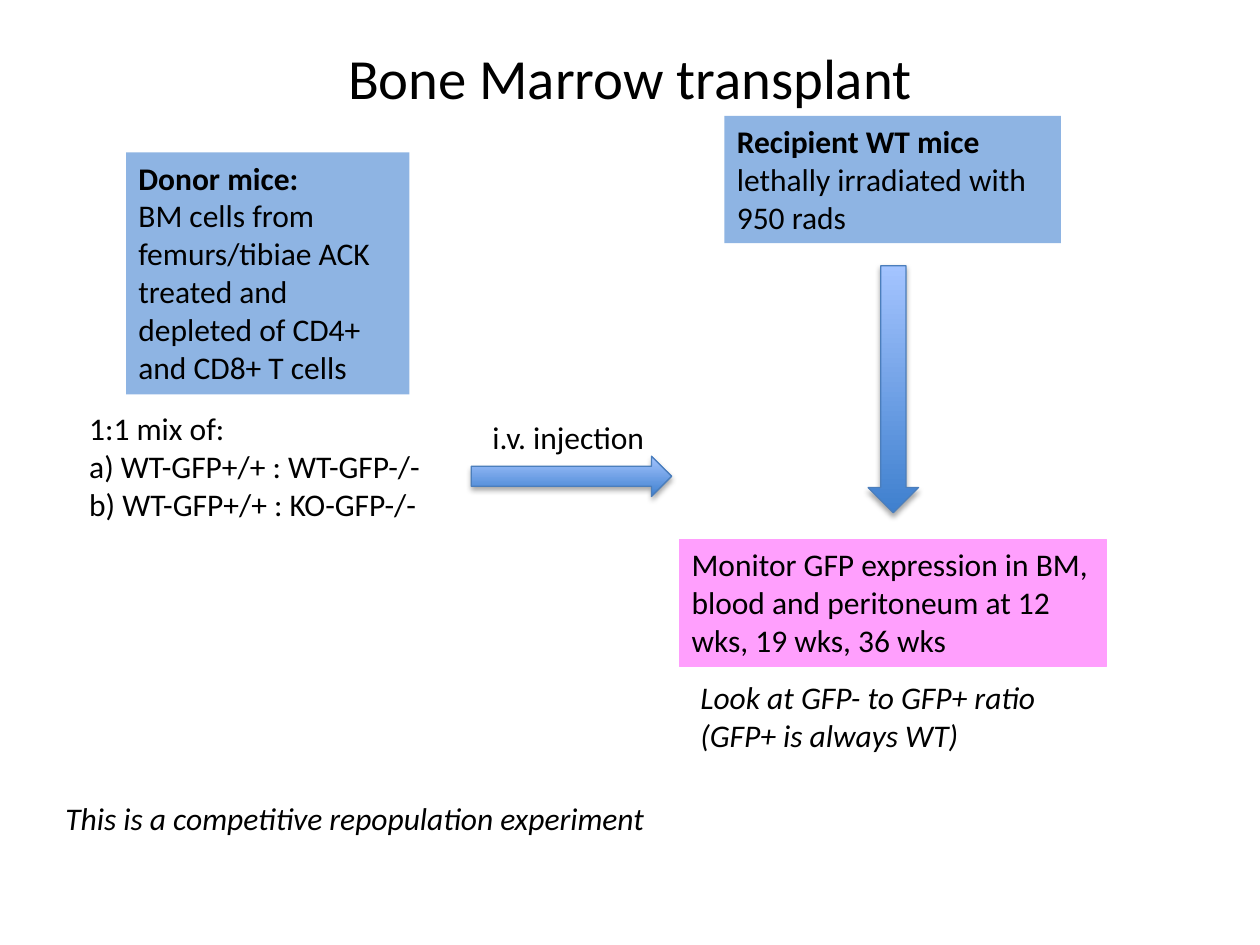
import pptx
import pptx.util
import pptx.dml.color
import pptx.enum.shapes
import pptx.enum.text
import pptx.oxml
import pptx.oxml.ns

Inches, Pt = pptx.util.Inches, pptx.util.Pt
RGB = pptx.dml.color.RGBColor.from_string
SHAPE = pptx.enum.shapes.MSO_SHAPE
ALIGN = pptx.enum.text.PP_ALIGN
ANCHOR = pptx.enum.text.MSO_ANCHOR
AUTO_SIZE = pptx.enum.text.MSO_AUTO_SIZE

THEME = {
    "font": "Calibri",
    "title": Pt(32.4),
    "body": Pt(18),
    "hairline": Pt(0.75),
    "text": RGB("000000"),
    "mice": RGB("8EB4E3"),
    "monitor": RGB("FF9FFD"),
    "arrow_line": RGB("4B7EBC"),
    "arrow_stops": [RGB("3F80CE"), RGB("A4C4FF")],
}
PLAIN, BOLD, ITALIC = {}, {"bold": True}, {"italic": True}

ARROW_SHADOW = (
    f'<a:outerShdw {pptx.oxml.ns.nsdecls("a")} blurRad="40000" dist="23000" '
    'dir="5400000" rotWithShape="0"><a:srgbClr val="000000">'
    '<a:alpha val="35000"/></a:srgbClr></a:outerShdw>'
)


def write(shape, paragraphs, size=THEME["body"], align=ALIGN.LEFT, anchor=ANCHOR.TOP,
          auto_size=AUTO_SIZE.SHAPE_TO_FIT_TEXT):
    """Fill a shape with paragraphs, each a list of (text, format) spans."""
    frame = shape.text_frame
    frame_format = {"word_wrap": True, "vertical_anchor": anchor, "auto_size": auto_size}
    for name, value in frame_format.items():
        setattr(frame, name, value)
    for index, spans in enumerate(paragraphs):
        para = frame.paragraphs[0] if index == 0 else frame.add_paragraph()
        para.alignment = align
        for text, style in spans:
            span = para.add_run()
            span.text = text
            span.font.color.rgb = THEME["text"]
            for name, value in {"name": THEME["font"], "size": size, **style}.items():
                setattr(span.font, name, value)


deck = pptx.Presentation()
deck.slide_width, deck.slide_height = Inches(10), Inches(7.5)
page = deck.slides.add_slide(deck.slide_layouts[6])

title = page.shapes.add_textbox(Inches(0.5), Inches(0.3), Inches(9), Inches(0.62))
write(title, [[("Bone Marrow transplant", PLAIN)]], THEME["title"], ALIGN.CENTER,
      ANCHOR.MIDDLE, AUTO_SIZE.NONE)

# Filled boxes: place, fill, outline, paragraphs
boxes = [
    ((5.75, 0.92, 2.67, 1.01), "mice", None,
     [[("Recipient WT mice", BOLD), (" lethally irradiated with 950 rads", PLAIN)]]),
    ((1, 1.21, 2.25, 1.92), "mice", None,
     [[("Donor mice:", BOLD)],
      [("BM cells from femurs/tibiae ACK treated and depleted of CD4+ and CD8+ T cells",
        PLAIN)]]),
    ((5.39, 4.28, 3.39, 1.01), "monitor", "monitor",
     [[("Monitor GFP expression in BM, blood and peritoneum at 12 wks, 19 wks, 36 wks",
        PLAIN)]]),
]
for place, fill, outline, paragraphs in boxes:
    box = page.shapes.add_shape(SHAPE.RECTANGLE, *map(Inches, place))
    box.shadow.inherit = False
    box.fill.solid()
    box.fill.fore_color.rgb = THEME[fill]
    if outline:
        box.line.color.rgb = THEME[outline]
        box.line.width = THEME["hairline"]
    else:
        box.line.fill.background()
    write(box, paragraphs)

arrows = [
    (SHAPE.RIGHT_ARROW, (3.74, 3.62, 1.59, 0.32)),
    (SHAPE.DOWN_ARROW, (6.89, 2.11, 0.4, 1.96)),
]
for kind, place in arrows:
    arrow = page.shapes.add_shape(kind, *map(Inches, place))
    arrow.fill.gradient()
    arrow.fill.gradient_angle = 90
    for stop, color, position in zip(arrow.fill.gradient_stops, THEME["arrow_stops"], (0, 1)):
        stop.color.rgb = color
        stop.position = position
    arrow.line.color.rgb = THEME["arrow_line"]
    arrow.line.width = THEME["hairline"]
    arrow.shadow.inherit = False
    effects = arrow._element.spPr.find(pptx.oxml.ns.qn("a:effectLst"))
    effects.append(pptx.oxml.parse_xml(ARROW_SHADOW))

# Unfilled notes: place, format, lines
notes = [
    ((0.61, 3.2, 3.04, 1.31), PLAIN,
     ["1:1 mix of:", "a) WT-GFP+/+ : WT-GFP-/-", "b) WT-GFP+/+ : KO-GFP-/-"]),
    ((3.81, 3.27, 1.85, 0.4), PLAIN, ["i.v. injection"]),
    ((0.42, 6.29, 5.08, 0.4), ITALIC, ["This is a competitive repopulation experiment"]),
    ((5.46, 5.33, 3.41, 0.71), ITALIC, ["Look at GFP- to GFP+ ratio (GFP+ is always WT)"]),
]
for place, style, lines in notes:
    note = page.shapes.add_textbox(*map(Inches, place))
    write(note, [[(line, style)] for line in lines])

deck.save("out.pptx")
